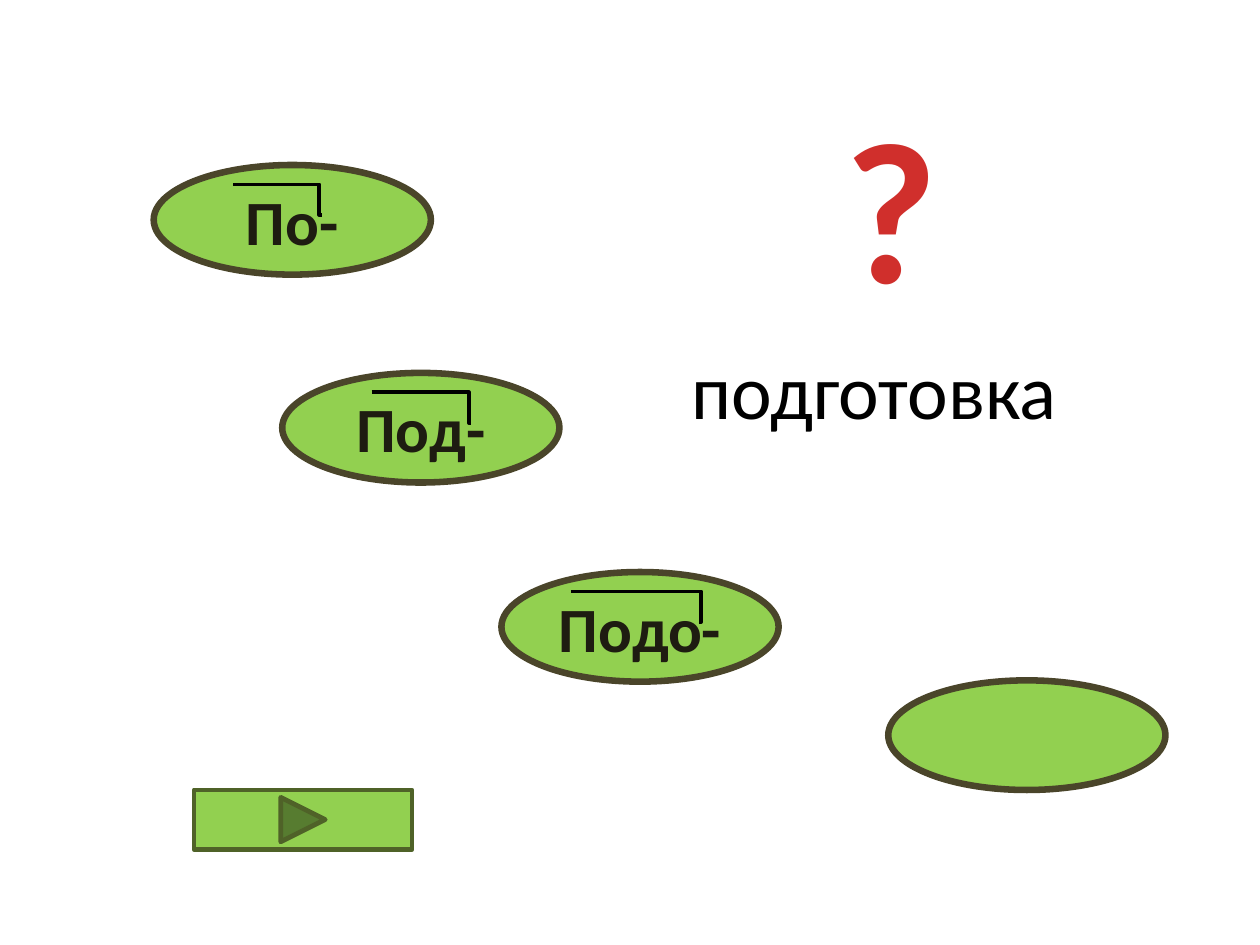
from dataclasses import dataclass

from lxml import etree
from pptx import Presentation
from pptx.dml.color import RGBColor
from pptx.enum.shapes import MSO_CONNECTOR as Conn, MSO_SHAPE as Shape
from pptx.enum.text import MSO_ANCHOR as Anchor, PP_ALIGN as Align
from pptx.oxml.ns import qn
from pptx.util import Inches, Pt

COLORS = {
    "green": "92D050",
    "brown": "4A452A",
    "olive": "4F6228",
    "ink": "1E1C11",
    "black": "000000",
    "red": "D02F2C",
}
OVAL_W, OVAL_H = 2.2, 0.87
MARK_DROP, MARK_H = 0.155, 0.24


@dataclass(frozen=True)
class Prefix:
    text: str
    left: float
    top: float
    mark_left: float
    mark_width: float
    bend: float


PREFIXES = [
    Prefix("Под-", 2.24, 2.96, 2.95, 0.79, 0.976),
    Prefix("По-", 1.22, 1.31, 1.85, 0.71, 0.965),
    Prefix("Подо-", 3.98, 4.54, 4.53, 1.02, 1.014),
]


def rgb(name: str) -> RGBColor:
    return RGBColor.from_string(COLORS[name])


def write(sp, text: str, *, size: float, color: str, bold=False, align=Align.LEFT,
          anchor=Anchor.TOP) -> None:
    tf = sp.text_frame
    tf.word_wrap = True
    tf.vertical_anchor = anchor
    p = tf.paragraphs[0]
    p.alignment = align
    r = p.add_run()
    r.text = text
    r.font.name = "Calibri"
    r.font.size = Pt(size)
    r.font.bold = bold
    r.font.color.rgb = rgb(color)


def add_shape(shapes, kind: Shape, left: float, top: float, width: float, height: float,
              line: str, weight: float):
    sp = shapes.add_shape(kind, Inches(left), Inches(top), Inches(width), Inches(height))
    sp.shadow.inherit = False
    sp.fill.solid()
    sp.fill.fore_color.rgb = rgb("green")
    sp.line.color.rgb = rgb(line)
    sp.line.width = Pt(weight)
    return sp


def add_oval(shapes, left: float, top: float):
    return add_shape(shapes, Shape.OVAL, left, top, OVAL_W, OVAL_H, "brown", 3.75)


def add_prefix_mark(shapes, item: Prefix) -> None:
    """Draw the corner sign over a prefix; bend is the share of the width where it turns."""
    top = item.top + MARK_DROP
    cxn = shapes.add_connector(
        Conn.ELBOW, Inches(item.mark_left), Inches(top),
        Inches(item.mark_left + item.mark_width), Inches(top + MARK_H))
    cxn.line.color.rgb = rgb("black")
    cxn.line.width = Pt(2.25)
    sp_pr = cxn._element.spPr
    etree.SubElement(sp_pr, qn("a:effectLst"))
    av_lst = sp_pr.find(qn("a:prstGeom")).find(qn("a:avLst"))
    etree.SubElement(av_lst, qn("a:gd"), name="adj1", fmla=f"val {round(item.bend * 100000)}")


def add_prefix(shapes, item: Prefix) -> None:
    group = shapes.add_group_shape()
    oval = add_oval(group.shapes, item.left, item.top)
    write(oval, item.text, size=36, color="ink", bold=True, align=Align.CENTER,
          anchor=Anchor.MIDDLE)
    add_prefix_mark(group.shapes, item)


def add_label(shapes, left: float, top: float, width: float, height: float, text: str,
              **fmt) -> None:
    box = shapes.add_textbox(Inches(left), Inches(top), Inches(width), Inches(height))
    write(box, text, **fmt)


def main() -> None:
    prs = Presentation()
    prs.slide_width, prs.slide_height = Inches(10), Inches(7.5)
    s = prs.slides.add_slide(prs.slide_layouts[6])
    for item in PREFIXES:
        add_prefix(s.shapes, item)
    add_oval(s.shapes, 7.05, 5.4)
    add_label(s.shapes, 5.39, 2.67, 3.54, 0.84, "подготовка", size=44, color="black")
    add_shape(s.shapes, Shape.ACTION_BUTTON_FORWARD_OR_NEXT, 1.54, 6.27, 1.73, 0.47,
              "olive", 2.75)
    add_label(s.shapes, 6.34, 0.6, 1.46, 2.04, "?", size=115, color="red", bold=True,
              align=Align.CENTER)
    prs.save("out.pptx")


if __name__ == "__main__":
    main()
